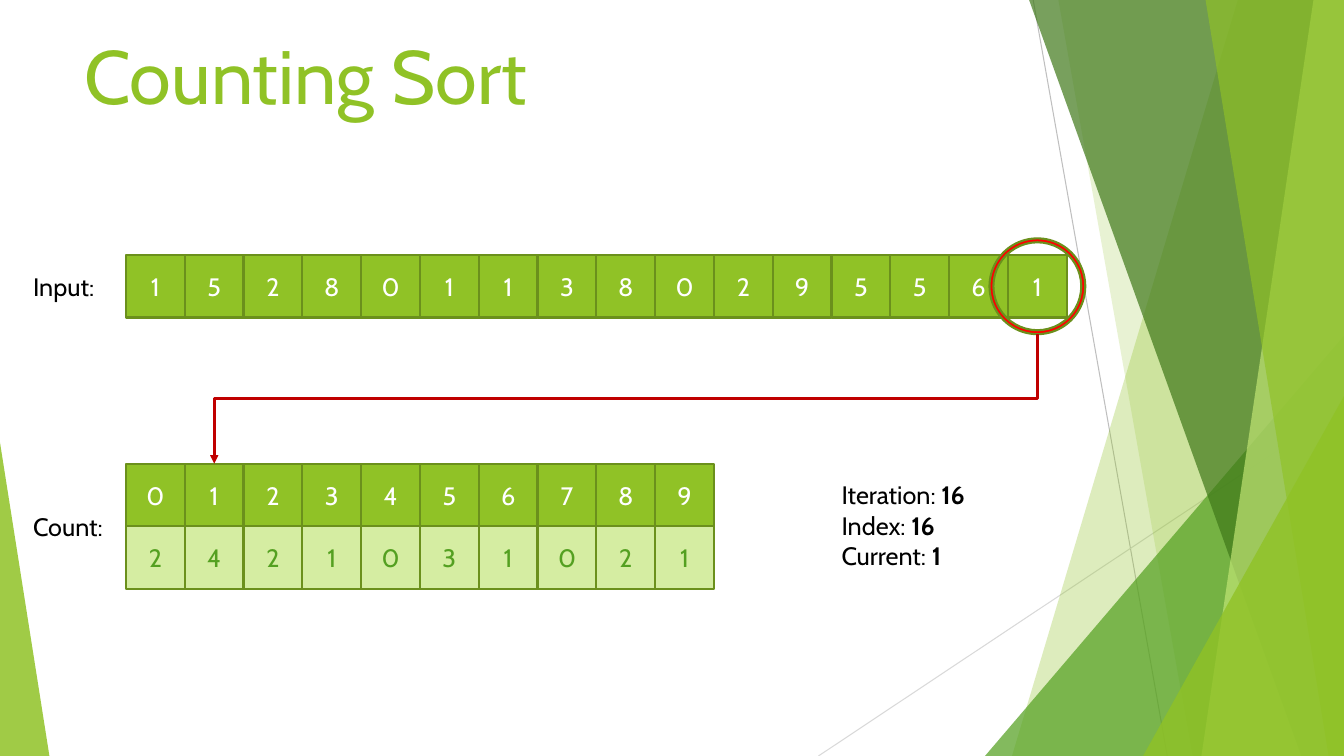
from lxml import etree
from pptx import Presentation
from pptx.dml.color import RGBColor
from pptx.enum import shapes, text
from pptx.oxml import ns
from pptx.util import Pt

FONT = "Cabin"
WIDTH, HEIGHT = 960, 540
COLORS = {
    "green": "90C226", "outline": "6B901C", "pale": "D5EDA2", "leaf": "54A021",
    "forest": "3F7819", "lime": "C0E474", "red": "FF0000", "arrow": "C00000",
    "gray": "BFBFBF", "silver": "D9D9D9", "white": "FFFFFF", "black": "000000",
}
ARRAY_LEFT, CELL_WIDTH, CELL_HEIGHT = 90, 42, 44.64
INPUT_TOP, COUNT_TOP = 182.16, 331.2
INPUT = [1, 5, 2, 8, 0, 1, 1, 3, 8, 0, 2, 9, 5, 5, 6, 1]
COUNTS = [2, 4, 2, 1, 0, 3, 1, 0, 2, 1]


def rgb(name):
    return RGBColor.from_string(COLORS[name])


def add_child(parent, tag, **attributes):
    return etree.SubElement(parent, ns.qn(tag), **attributes)


def paint(shape, fill, outline=None, opacity=100):
    shape.shadow.inherit = False
    shape.fill.solid()
    shape.fill.fore_color.rgb = rgb(fill)
    if opacity < 100:
        color = shape.fill._xPr.find(".//" + ns.qn("a:srgbClr"))
        add_child(color, "a:alpha", val=str(opacity * 1000))
    if outline:
        shape.line.color.rgb = rgb(outline)
        shape.line.width = Pt(1.5)
    else:
        shape.line.fill.background()


def add_preset(slide, kind, left, top, width, height):
    return slide.shapes.add_shape(kind, Pt(left), Pt(top), Pt(width), Pt(height))


def add_wedge(slide, top_x, bottom_x, color, opacity):
    """Fill everything right of a slanted edge that runs from top to bottom."""
    builder = slide.shapes.build_freeform(Pt(top_x), Pt(0))
    corners = [(WIDTH, 0), (WIDTH, HEIGHT), (bottom_x, HEIGHT)]
    builder.add_line_segments([(Pt(x), Pt(y)) for x, y in corners])
    paint(builder.convert_to_shape(), color, opacity=opacity)


def add_corner(slide, left, width, height, apex, color, opacity):
    """Stand a right triangle on the bottom edge, its apex at 0 or 1 of its width."""
    triangle = add_preset(slide, shapes.MSO_SHAPE.ISOSCELES_TRIANGLE,
                          left, HEIGHT - height, width, height)
    triangle.adjustments[0] = apex
    paint(triangle, color, opacity=opacity)


def add_line(slide, start, end, color, weight, kind=shapes.MSO_CONNECTOR.STRAIGHT):
    line = slide.shapes.add_connector(kind, *[Pt(value) for value in start + end])
    line.line.color.rgb = rgb(color)
    line.line.width = Pt(weight)
    add_child(line._element.spPr, "a:effectLst")
    return line


def add_down_arrow(slide, start, end):
    """Draw an elbow arrow that leaves downwards, by a quarter turn of the connector."""
    arrow = add_line(slide, start, end, "arrow", 2, shapes.MSO_CONNECTOR.ELBOW)
    across, down = start[0] - end[0], end[1] - start[1]
    middle_x, middle_y = (start[0] + end[0]) / 2, (start[1] + end[1]) / 2
    frame = arrow._element.spPr.find(ns.qn("a:xfrm"))
    frame.attrib.clear()
    frame.set("rot", str(90 * 60000))
    arrow.left, arrow.top = Pt(middle_x - down / 2), Pt(middle_y - across / 2)
    arrow.width, arrow.height = Pt(down), Pt(across)
    add_child(arrow.line._get_or_add_ln(), "a:tailEnd", type="triangle")


def style(para, size, color):
    para.font.name = FONT
    para.font.size = Pt(size)
    para.font.color.rgb = rgb(color)


def add_text(slide, left, top, width, height, lines, size=18, color="black"):
    """Write lines of (plain, bold) text."""
    box = slide.shapes.add_textbox(Pt(left), Pt(top), Pt(width), Pt(height))
    frame = box.text_frame
    frame.word_wrap = True
    for index, (plain, bold) in enumerate(lines):
        para = frame.add_paragraph() if index else frame.paragraphs[0]
        style(para, size, color)
        para.add_run().text = plain
        if bold:
            span = para.add_run()
            span.text = bold
            span.font.bold = True


def add_array(slide, top, values, fill, color):
    for index, value in enumerate(values):
        cell = add_preset(slide, shapes.MSO_SHAPE.RECTANGLE,
                          ARRAY_LEFT + index * CELL_WIDTH, top, CELL_WIDTH, CELL_HEIGHT)
        paint(cell, fill, "outline")
        cell.text_frame.vertical_anchor = text.MSO_ANCHOR.MIDDLE
        para = cell.text_frame.paragraphs[0]
        para.text = str(value)
        para.alignment = text.PP_ALIGN.CENTER
        style(para, 18, color)


def add_backdrop(slide):
    add_line(slide, (738, 0), (833.8, HEIGHT), "gray", 0.75)
    add_line(slide, (WIDTH, 290.2), (584.6, HEIGHT), "silver", 0.75)
    add_wedge(slide, 884.2, 722.9, "green", 30)
    add_wedge(slide, 756, 851.8, "green", 20)
    add_corner(slide, 703.6, 256.4, 300.2, 1, "leaf", 72)
    add_wedge(slide, 735.1, 929.5, "forest", 70)
    add_wedge(slide, 938.2, 858.2, "lime", 70)
    add_wedge(slide, 861.1, 949, "green", 65)
    add_corner(slide, 816.5, 143.5, 257, 1, "green", 80)
    add_corner(slide, 0, 35.3, 223.9, 0, "green", 85)


def cell_center(index):
    return ARRAY_LEFT + (index + 0.5) * CELL_WIDTH


def add_current_marker(slide):
    """Ring the last input value and point from it to its counter."""
    size = 68.4
    center_x = cell_center(len(INPUT) - 1)
    center_y = INPUT_TOP + CELL_HEIGHT / 2
    ring = add_preset(slide, shapes.MSO_SHAPE.DONUT,
                      center_x - size / 2, center_y - size / 2, size, size)
    ring.adjustments[0] = 0.041
    paint(ring, "red", "outline")
    add_down_arrow(slide, (center_x, center_y + size / 2),
                   (cell_center(INPUT[-1]), COUNT_TOP))


def main():
    deck = Presentation()
    deck.slide_width, deck.slide_height = Pt(WIDTH), Pt(HEIGHT)
    slide = deck.slides.add_slide(deck.slide_layouts[6])
    add_backdrop(slide)
    add_text(slide, 53.3, 17.3, 676.8, 122.4, [("Counting Sort", "")], 54, "green")
    add_array(slide, INPUT_TOP, INPUT, "green", "white")
    add_array(slide, COUNT_TOP, range(len(COUNTS)), "green", "white")
    add_array(slide, COUNT_TOP + CELL_HEIGHT, COUNTS, "pale", "leaf")
    add_current_marker(slide)
    add_text(slide, 16.5, 190, 74, 29, [("Input:", "")])
    add_text(slide, 16.5, 361.4, 74, 29, [("Count:", "")])
    add_text(slide, 594, 339.1, 126, 72.7,
             [("Iteration: ", "16"), ("Index:", " 16"), ("Current:", " 1")])
    deck.save("out.pptx")


if __name__ == "__main__":
    main()
